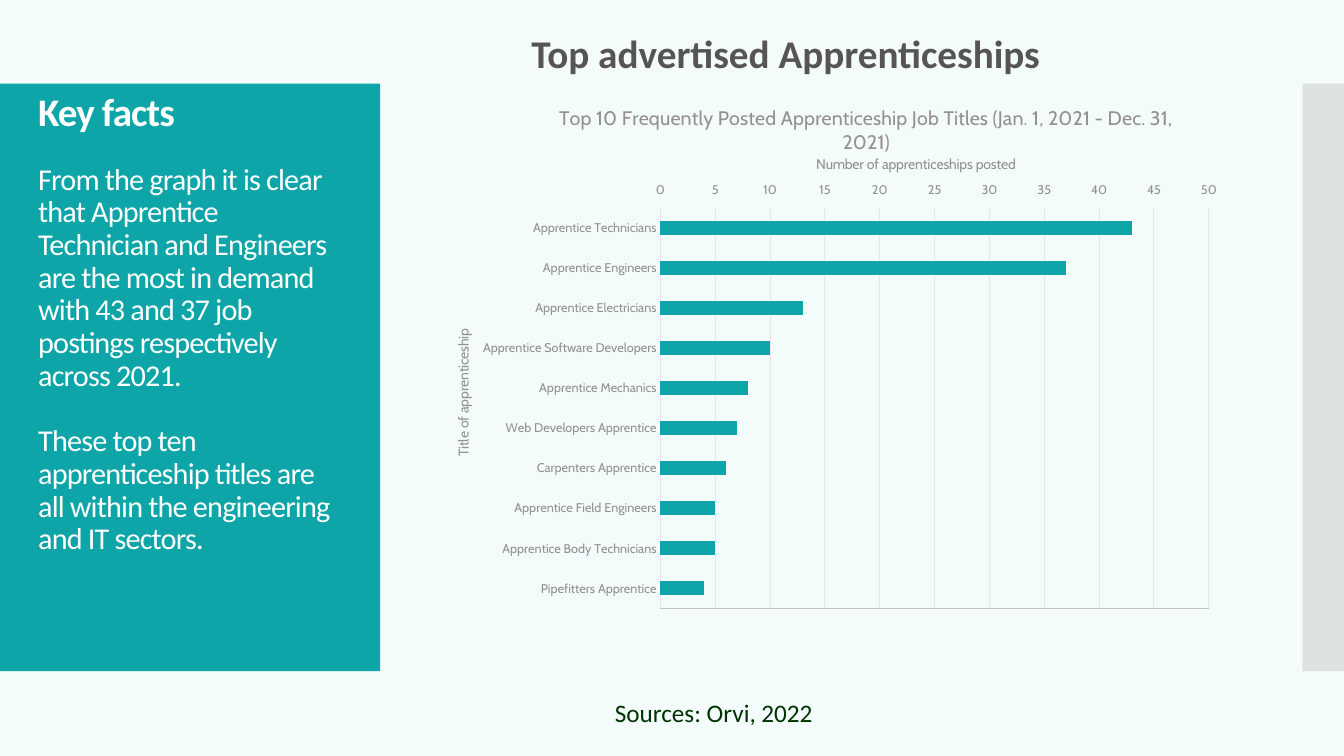
from lxml import etree
from pptx import Presentation
from pptx.chart.data import CategoryChartData
from pptx.dml.color import RGBColor
from pptx.enum import chart as ch, shapes, text
from pptx.oxml import parse_xml
from pptx.oxml.ns import nsdecls
from pptx.util import Inches, Pt

HEAD = "Top advertised Apprenticeships"
SOURCE = "Sources: Orvi, 2022"
FACTS = [
    "From the graph it is clear that Apprentice Technician and Engineers are "
    "the most in demand with 43 and 37 job postings respectively across 2021.",
    "These top ten apprenticeship titles are all within the engineering and IT sectors.",
]
POSTS = [
    ("Pipefitters Apprentice", 4),
    ("Apprentice Body Technicians", 5),
    ("Apprentice Field Engineers", 5),
    ("Carpenters Apprentice", 6),
    ("Web Developers Apprentice", 7),
    ("Apprentice Mechanics", 8),
    ("Apprentice Software Developers", 10),
    ("Apprentice Electricians", 13),
    ("Apprentice Engineers", 37),
    ("Apprentice Technicians", 43),
]
TITLE = "Top 10 Frequently Posted Apprenticeship Job Titles (Jan. 1, 2021 - Dec. 31, 2021)"


class Theme:
    body, plot = "Calibri", "Cabin"
    back, teal, side, white = "F3FBFB", "0DA5A8", "DDE1E1", "FEFFFE"
    dark, green, soft, grid, axis = "575553", "003300", "93908E", "E6E6E5", "C5C2C1"
    head, key, fact, source = 28, 27.9, 21.6, 18
    title, name, tick = 14, 10, 9


def rgb(code):
    return RGBColor.from_string(code)


def style(font, size, color, face, bold=False):
    font.size, font.name, font.bold = Pt(size), face, bold
    font.color.rgb = rgb(color)


def panel(slide, box, color):
    rect = slide.shapes.add_shape(shapes.MSO_SHAPE.RECTANGLE, *map(Inches, box))
    rect.shadow.inherit = False
    rect.fill.solid()
    rect.fill.fore_color.rgb = rgb(color)
    rect.line.fill.background()


def write(slide, box, lines, align=text.PP_ALIGN.LEFT):
    """Add a text box; each line is words, size, colour, bold, line spacing, gap after, tracking."""
    frame = slide.shapes.add_textbox(*map(Inches, box)).text_frame
    frame.word_wrap = True
    for i, (words, size, color, bold, lead, gap, track) in enumerate(lines):
        para = frame.add_paragraph() if i else frame.paragraphs[0]
        para.alignment, para.line_spacing, para.space_after = align, lead, Pt(gap)
        run = para.add_run()
        run.text = words
        style(run.font, size, color, Theme.body, bold)
        if track:
            run.font._element.set("spc", str(track))


def place(owner, x, y, w=None, h=None):
    """Fix a title's corner, or the plot's inner box, as shares of the chart."""
    node = owner._element if hasattr(owner, "_element") else owner
    for old in node.findall("{*}layout"):
        node.remove(old)
    parts = [("xMode", "edge"), ("yMode", "edge"), ("x", x), ("y", y)]
    if w:
        parts = [("layoutTarget", "inner")] + parts + [("w", w), ("h", h)]
    inner = "".join(f'<c:{tag} val="{val}"/>' for tag, val in parts)
    lay = parse_xml(f'<c:layout {nsdecls("c")}><c:manualLayout>{inner}</c:manualLayout></c:layout>')
    spot = node.find("{*}tx")
    node.insert(0 if spot is None else node.index(spot) + 1, lay)


def label(owner, words, size, x, y):
    owner.has_title = True
    title = owner.chart_title if hasattr(owner, "chart_title") else owner.axis_title
    run = title.text_frame.paragraphs[0].add_run()
    run.text = words
    style(run.font, size, Theme.soft, Theme.plot)
    place(title, x, y)


def trim(axis, color):
    axis.major_tick_mark = axis.minor_tick_mark = ch.XL_TICK_MARK.NONE
    style(axis.tick_labels.font, Theme.tick, Theme.soft, Theme.plot)
    axis.format.line.color.rgb = rgb(color)
    axis.format.line.width = Pt(0.75)


def graph(slide, box):
    data = CategoryChartData()
    data.categories = [job for job, _ in POSTS]
    data.add_series("Series 1", [count for _, count in POSTS])
    chart = slide.shapes.add_chart(
        ch.XL_CHART_TYPE.BAR_CLUSTERED, *map(Inches, box), data).chart
    chart.has_legend = False
    style(chart.font, Theme.name, Theme.dark, Theme.plot)
    label(chart, TITLE, Theme.title, 0.16, 0.01)
    cats, vals = chart.category_axis, chart.value_axis
    label(cats, "Title of apprenticeship", Theme.name, 0.03, 0.41)
    label(vals, "Number of apprenticeships posted", Theme.name, 0.48, 0.1)
    trim(cats, Theme.grid)
    trim(vals, Theme.axis)
    cats.has_major_gridlines = False
    vals.minimum_scale, vals.maximum_scale, vals.major_unit = 0, 50, 5
    vals.tick_label_position = ch.XL_TICK_LABEL_POSITION.HIGH
    vals.tick_labels.number_format = r"#,##0;[Red]\ \(#,##0\)"
    vals.tick_labels.number_format_is_linked = False
    line = vals.major_gridlines.format.line
    line.color.rgb, line.width = rgb(Theme.grid), Pt(0.75)
    plot = chart.plots[0]
    plot.gap_width, plot.vary_by_categories = 182, False
    fill = plot.series[0].format.fill
    fill.solid()
    fill.fore_color.rgb = rgb(Theme.teal)
    place(chart._chartSpace.chart.plotArea, 0.29, 0.2, 0.68, 0.71)


def main():
    deck = Presentation()
    deck.slide_width, deck.slide_height = Inches(13.33), Inches(7.5)
    slide = deck.slides.add_slide(deck.slide_layouts[6])
    slide.background.fill.solid()
    slide.background.fill.fore_color.rgb = rgb(Theme.back)
    panel(slide, (0, 0.83, 3.77, 5.83), Theme.teal)
    panel(slide, (12.92, 0.83, 0.41, 5.83), Theme.side)
    facts = [("Key facts", Theme.key, Theme.white, True, 0.9, 21, -60)]
    facts += [(fact, Theme.fact, Theme.white, False, 0.9, 23.4, -60) for fact in FACTS]
    write(slide, (0.28, 0.87, 3.22, 5.03), facts)
    write(slide, (6, 6.87, 6.23, 0.4),
          [(SOURCE, Theme.source, Theme.green, False, 1.0, 0, 0)])
    write(slide, (4.5, 0.29, 6.67, 0.53),
          [(HEAD + " ", Theme.head, Theme.dark, True, 0.9, 0, 0)], text.PP_ALIGN.CENTER)
    graph(slide, (4.23, 0.94, 8, 5.6))
    deck.save("out.pptx")


if __name__ == "__main__":
    main()
